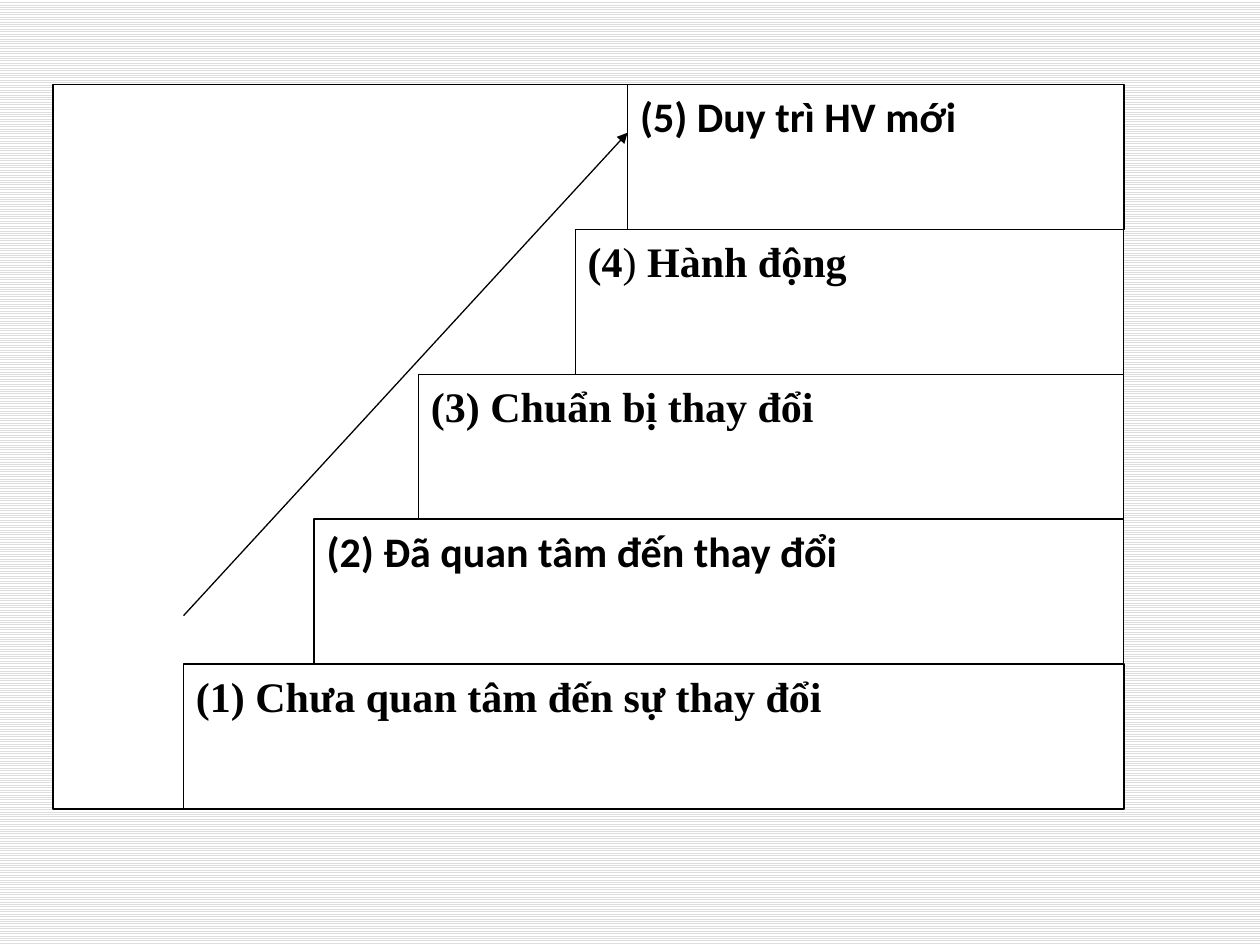
from dataclasses import dataclass

from lxml.etree import SubElement
from pptx import Presentation
from pptx.dml.color import RGBColor
from pptx.enum.dml import MSO_PATTERN
from pptx.enum.shapes import MSO_CONNECTOR, MSO_SHAPE
from pptx.enum.text import MSO_ANCHOR, PP_ALIGN
from pptx.oxml.ns import qn
from pptx.util import Inches, Pt


@dataclass(frozen=True)
class Theme:
    """Colours, fonts and sizes of the slide."""
    ink: RGBColor = RGBColor(0, 0, 0)
    paper: RGBColor = RGBColor(255, 255, 255)
    stripe: RGBColor = RGBColor(0xDD, 0xDD, 0xDD)
    serif: str = "Times New Roman"
    sans: str = "Calibri"
    text_size: Pt = Pt(24)
    line_width: Pt = Pt(0.75)


@dataclass(frozen=True)
class Grid:
    """Columns and rows of the staircase panel."""
    left: float = 0.42
    top: float = 0.67
    width: float = 8.5
    height: float = 5.75
    columns: int = 41
    rows: int = 5

    def x(self, column):
        """Return the horizontal position of a column edge."""
        return Inches(self.left + column * self.width / self.columns)

    def y(self, row):
        """Return the vertical position of a row edge."""
        return Inches(self.top + row * self.height / self.rows)


THEME = Theme()
GRID = Grid()
STEPS = [
    (5, THEME.serif, [("(1) Chưa quan tâm đến sự thay đổi", True)]),
    (10, THEME.sans, [("(2) Đã quan tâm đến thay đổi", True)]),
    (14, THEME.serif, [("(3) Chuẩn bị thay đổi", True)]),
    (20, THEME.serif, [("(4", True), (")", False), (" Hành động", True)]),
    (22, THEME.sans, [("(5) Duy trì HV mới", True)]),
]


def stripe_background(slide):
    """Fill the background with light horizontal stripes."""
    fill = slide.background.fill
    fill.patterned()
    fill.pattern = MSO_PATTERN.LIGHT_HORIZONTAL
    fill.fore_color.rgb = THEME.stripe
    fill.back_color.rgb = THEME.paper


def outline(line):
    """Give a line the theme's colour and width."""
    line.color.rgb = THEME.ink
    line.width = THEME.line_width


def add_box(shapes, column, row, bottom_row):
    """Add a box from a column to the right edge of the grid."""
    left, top = GRID.x(column), GRID.y(row)
    box = shapes.add_shape(MSO_SHAPE.RECTANGLE, left, top,
                           GRID.x(GRID.columns) - left, GRID.y(bottom_row) - top)
    box.shadow.inherit = False
    box.fill.solid()
    box.fill.fore_color.rgb = THEME.paper
    outline(box.line)
    return box


def add_step(shapes, column, row, font_name, pieces):
    """Add one labelled step of the staircase."""
    text_frame = add_box(shapes, column, row, row + 1).text_frame
    text_frame.word_wrap = True
    text_frame.vertical_anchor = MSO_ANCHOR.TOP
    paragraph = text_frame.paragraphs[0]
    paragraph.alignment = PP_ALIGN.LEFT
    for text, bold in pieces:
        run = paragraph.add_run()
        run.text = text
        run.font.name = font_name
        run.font.size = THEME.text_size
        run.font.bold = bold
        run.font.color.rgb = THEME.ink


def add_arrow(shapes, start, end):
    """Add a straight arrow between two (column, row) points."""
    arrow = shapes.add_connector(MSO_CONNECTOR.STRAIGHT, GRID.x(start[0]), GRID.y(start[1]),
                                 GRID.x(end[0]), GRID.y(end[1]))
    outline(arrow.line)
    SubElement(arrow.line._get_or_add_ln(), qn("a:tailEnd"), type="triangle")
    SubElement(arrow._element.spPr, qn("a:effectLst"))


def main():
    """Build the staircase of change and save it."""
    presentation = Presentation()
    presentation.slide_width, presentation.slide_height = Inches(10), Inches(7.5)
    slide = presentation.slides.add_slide(presentation.slide_layouts[6])
    stripe_background(slide)
    shapes = slide.shapes.add_group_shape().shapes
    add_box(shapes, 0, 0, GRID.rows)
    for number, (column, font_name, pieces) in enumerate(STEPS, start=1):
        add_step(shapes, column, GRID.rows - number, font_name, pieces)
    add_arrow(shapes, (STEPS[0][0], GRID.rows - 1 - 1 / 3), (STEPS[-1][0], 1 / 3))
    presentation.save("out.pptx")


if __name__ == "__main__":
    main()
